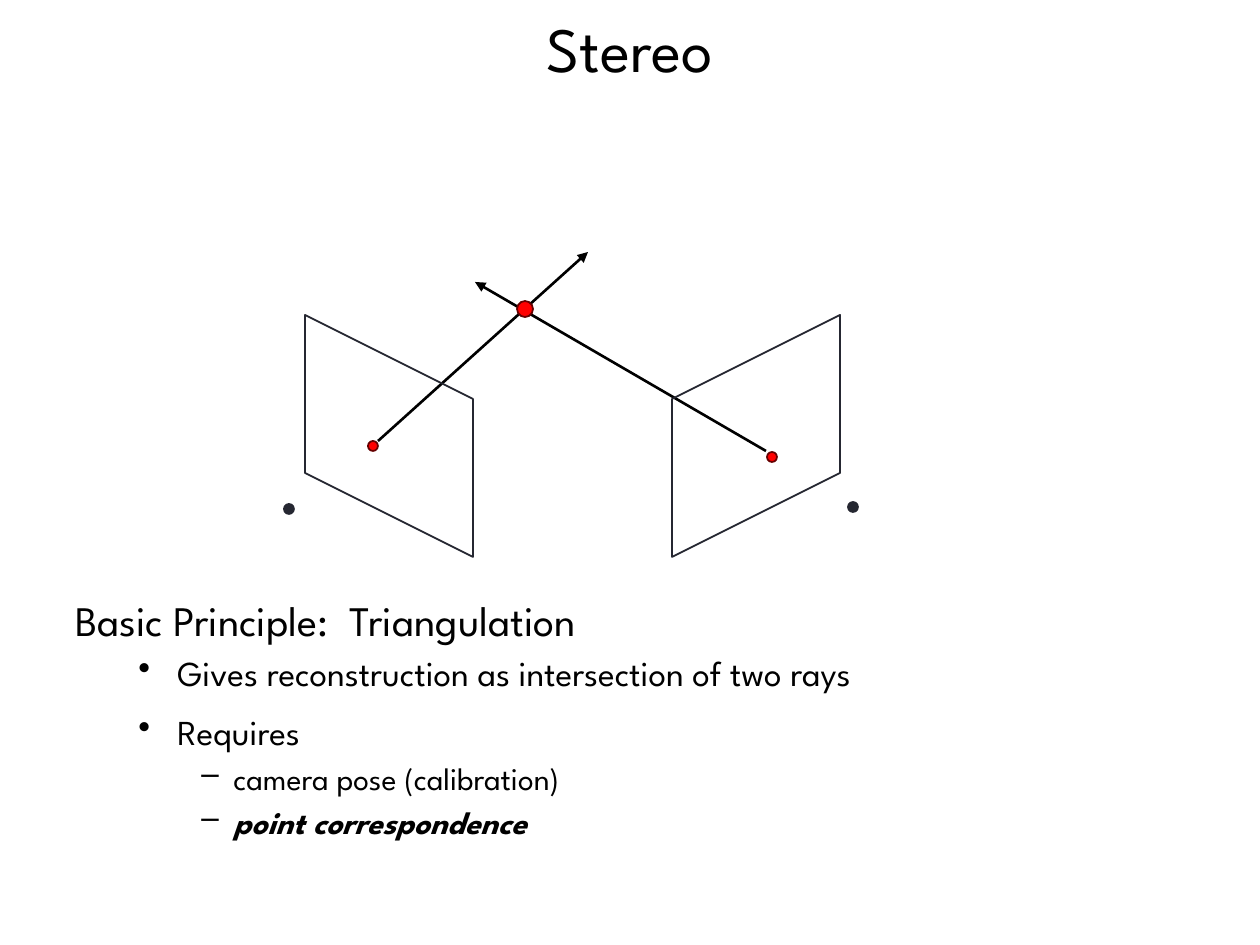
from lxml.etree import SubElement as Sub
from pptx import Presentation
from pptx.dml.color import RGBColor
from pptx.enum.shapes import MSO_CONNECTOR as Conn, MSO_SHAPE as Shape
from pptx.enum.text import MSO_ANCHOR as Anchor, PP_ALIGN as Align
from pptx.oxml.ns import qn
from pptx.util import Emu, Pt

BLACK = RGBColor(0, 0, 0)
DARK = RGBColor(0x25, 0x27, 0x31)
RED = RGBColor(0xFF, 0, 0)
MAROON = RGBColor(0x66, 0, 0)
SCALE = 914400 / 126
LEVELS = [
    dict(size=24, left=47, hang=47, mark=None),
    dict(size=20, left=102, hang=39, mark="•"),
    dict(size=18, left=158, hang=32, mark="–"),
]


def px(num):
    return Emu(round(num * SCALE))


class Board:
    def __init__(self, slide, face):
        self.slide = slide
        self.shapes = slide.shapes
        self.face = face

    def paint(self, shape, fill, line):
        shape.shadow.inherit = False
        if fill is None:
            shape.fill.background()
        else:
            shape.fill.solid()
            shape.fill.fore_color.rgb = fill
        shape.line.color.rgb = line
        shape.line.width = Pt(1)

    def dot(self, x, y, size, fill, line):
        box = [px(n) for n in (x - size / 2, y - size / 2, size, size)]
        self.paint(self.shapes.add_shape(Shape.OVAL, *box), fill, line)

    def frame(self, points):
        pen = self.shapes.build_freeform(*points[0], scale=SCALE)
        pen.add_line_segments(points[1:], close=True)
        self.paint(pen.convert_to_shape(), None, DARK)

    def ray(self, start, end):
        ends = [px(n) for n in (*start, *end)]
        link = self.shapes.add_connector(Conn.STRAIGHT, *ends)
        link.line.color.rgb = BLACK
        link.line.width = Pt(1.5)
        props = link._element.spPr
        Sub(props.find(qn("a:ln")), qn("a:tailEnd"), type="triangle")
        Sub(props, qn("a:effectLst"))

    def text(self, box, **form):
        frame = self.shapes.add_textbox(*map(px, box)).text_frame
        for key, val in dict(word_wrap=True, **form).items():
            setattr(frame, key, val)
        return frame

    def label(self, para, words, **form):
        run = para.add_run()
        run.text = words
        run.font.color.rgb = BLACK
        for key, val in dict(name=self.face, **form).items():
            setattr(run.font, key, val)

    def title(self, words, box):
        para = self.text(box, vertical_anchor=Anchor.MIDDLE).paragraphs[0]
        para.alignment = Align.CENTER
        self.label(para, words, size=Pt(36))

    def points(self, box, items):
        frame = self.text(box)
        for num, (level, words, form) in enumerate(items):
            para = frame.add_paragraph() if num else frame.paragraphs[0]
            rule = LEVELS[level]
            para.level = level
            props = para._p.get_or_add_pPr()
            props.set("marL", str(px(rule["left"])))
            props.set("indent", str(-px(rule["hang"])))
            if rule["mark"]:
                Sub(props, qn("a:buChar"), char=rule["mark"])
            else:
                Sub(props, qn("a:buNone"))
            if num:
                para.space_before = Pt(rule["size"] * 0.2)
            self.label(para, words, size=Pt(rule["size"]), **form)


def main():
    deck = Presentation()
    deck.slide_width, deck.slide_height = px(1260), px(945)
    board = Board(deck.slides.add_slide(deck.slide_layouts[6]), "League Spartan")

    board.ray((766, 451), (475, 282))
    board.ray((378, 441), (588, 252))
    board.title("Stereo", (0, 0, 1260, 94))

    left = [(305, 315), (305, 473), (473, 557), (473, 399)]
    board.frame(left)
    board.frame([(1145 - x, y) for x, y in left])

    for x, y, size, fill, line in [
        (289, 509, 10, DARK, DARK),
        (373, 446, 10, RED, MAROON),
        (772, 457, 10, RED, MAROON),
        (853, 507, 10, DARK, DARK),
        (525, 309, 16, RED, MAROON),
    ]:
        board.dot(x, y, size, fill, line)

    board.points((63, 588, 1134, 126), [
        (0, "Basic Principle:  Triangulation", {}),
        (1, "Gives reconstruction as intersection of two rays", {}),
    ])
    board.points((63, 704, 1134, 158), [
        (1, "Requires", {}),
        (2, "camera pose (calibration)", {}),
        (2, "point correspondence", dict(bold=True, italic=True)),
    ])
    deck.save("out.pptx")


if __name__ == "__main__":
    main()
